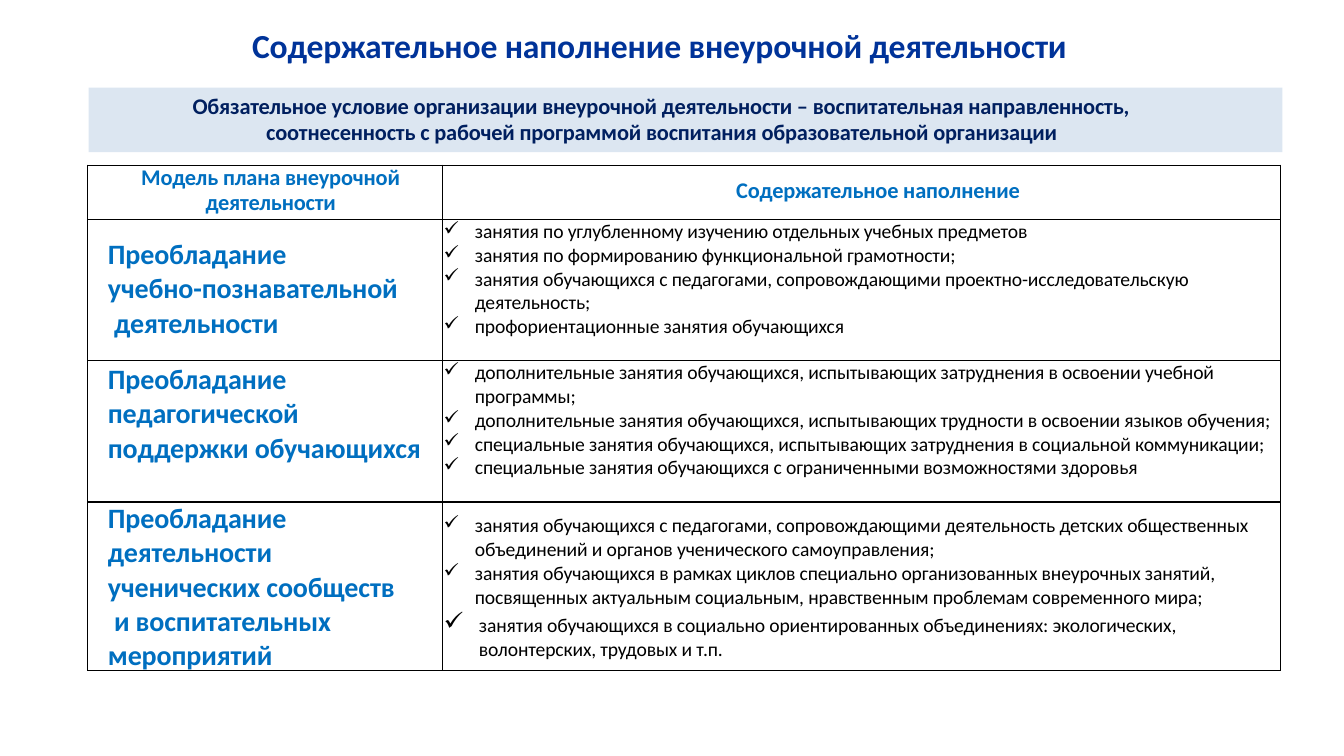
from pptx import Presentation
from pptx.dml.color import RGBColor as Rgb
from pptx.enum.shapes import MSO_SHAPE as Kind
from pptx.enum.text import MSO_ANCHOR as Anchor, PP_ALIGN as Align
from pptx.oxml import parse_xml
from pptx.oxml.ns import nsdecls
from pptx.util import Inches, Pt

HUES = {"title": "003399", "band": "DCE6F1", "navy": "001F5F",
        "blue": "006FC0", "black": "000000"}
TITLE = "Содержательное наполнение внеурочной деятельности"
RULE = ("Обязательное условие организации внеурочной деятельности – воспитательная "
        "направленность, соотнесенность с рабочей программой воспитания "
        "образовательной организации")
HEADS = [
    (["Модель плана внеурочной", "деятельности"], {"left": 0.11, "lead": 18.4}),
    (["Содержательное наполнение"], {"left": 0.33, "top": 0.12}),
]
CONT = {"mark": None, "hang": 0}
LAST = {"left": 0.36, "hang": -0.35, "grow": 129, "before": 3}
ROWS = [
    (["Преобладание", "учебно-познавательной\v деятельности"], {"top": 0.18},
     ["занятия по углубленному изучению отдельных учебных предметов",
      "занятия по формированию функциональной грамотности;",
      "занятия обучающихся с педагогами, сопровождающими "
      "проектно-исследовательскую деятельность;",
      "профориентационные занятия обучающихся"], {}),
    (["Преобладание", "педагогической", "поддержки обучающихся"], {"top": 0.02},
     ["дополнительные занятия обучающихся, испытывающих затруднения в освоении учебной",
      ("программы;", CONT),
      "дополнительные занятия обучающихся, испытывающих трудности "
      "в освоении языков обучения;",
      "специальные занятия обучающихся, испытывающих затруднения "
      "в социальной коммуникации;",
      "специальные занятия обучающихся с ограниченными возможностями здоровья"], {}),
    (["Преобладание", "деятельности",
      "ученических сообществ\v и воспитательных мероприятий"], {},
     ["занятия обучающихся с педагогами, сопровождающими деятельность детских "
      "общественных объединений и органов ученического самоуправления;",
      "занятия обучающихся в рамках циклов специально организованных внеурочных занятий,",
      ("посвященных актуальным социальным, нравственным проблемам "
       "современного мира;", CONT),
      ("занятия обучающихся в социально ориентированных объединениях: "
       "экологических, волонтерских, трудовых и т.п.", LAST)], {"top": 0.12}),
]
COLS = [3.52, 8.31]
TALL = [0.54, 1.4, 1.4, 1.67]


def style(par, text, size=14, hue="black", bold=False, align=Align.LEFT, left=0,
          hang=0, lead=None, before=0, mark=None, grow=100):
    par.text = text
    par.alignment = align
    par.space_before = Pt(before)
    if lead:
        par.line_spacing = Pt(lead)
    prop = par._p.get_or_add_pPr()
    prop.set("marL", str(Inches(left)))
    prop.set("indent", str(Inches(hang)))
    if mark:
        prop.append(parse_xml(f'<a:buSzPct {nsdecls("a")} val="{grow * 1000}"/>'))
        prop.append(parse_xml(f'<a:buChar {nsdecls("a")} char="{mark}"/>'))
    for run in par.runs:
        font = run.font
        font.name, font.size, font.bold = "Calibri", Pt(size), bold
        font.color.rgb = Rgb.from_string(HUES[hue])
        run._r.get_or_add_rPr().set("spc", "-12")


def write(frame, lines, **form):
    for num, line in enumerate(lines):
        text, extra = (line, {}) if isinstance(line, str) else line
        par = frame.add_paragraph() if num else frame.paragraphs[0]
        style(par, text, **{**form, **extra})


def pad(part, top):
    part.margin_left = part.margin_right = part.margin_bottom = 0
    part.margin_top = Inches(top)
    part.vertical_anchor = Anchor.TOP


def fill(cell, lines, top=0, **form):
    pad(cell, top)
    cell.fill.background()
    prop = cell._tc.get_or_add_tcPr()
    for num, side in enumerate(("lnL", "lnR", "lnT", "lnB")):
        prop.insert(num, parse_xml(
            f'<a:{side} {nsdecls("a")} w="12700"><a:solidFill>'
            f'<a:srgbClr val="{HUES["black"]}"/></a:solidFill></a:{side}>'))
    write(cell.text_frame, lines, **form)


def main():
    """Build the slide on the content of extracurricular work."""
    deck = Presentation()
    deck.slide_width, deck.slide_height = Inches(13.33), Inches(7.5)
    shapes = deck.slides.add_slide(deck.slide_layouts[6]).shapes

    title = shapes.add_textbox(Inches(2.49), Inches(0.24), Inches(8.19), Inches(0.43))
    title.text_frame.word_wrap = True
    pad(title.text_frame, 0.01)
    write(title.text_frame, [TITLE], size=24, hue="title", bold=True, left=0.01)

    band = shapes.add_shape(Kind.RECTANGLE, Inches(0.88), Inches(0.87),
                            Inches(11.84), Inches(0.64))
    band.shadow.inherit = False
    band.fill.solid()
    band.fill.fore_color.rgb = Rgb.from_string(HUES["band"])
    band.line.fill.background()
    band.text_frame.word_wrap = True
    pad(band.text_frame, 0.04)
    write(band.text_frame, [RULE], size=16, hue="navy", bold=True, left=1.76, hang=-0.73)

    grid = shapes.add_table(len(TALL), len(COLS), Inches(0.87), Inches(1.64),
                            Inches(sum(COLS)), Inches(sum(TALL))).table
    grid.first_row = grid.horz_banding = False
    for col, wide in zip(grid.columns, COLS):
        col.width = Inches(wide)
    for row, tall in zip(grid.rows, TALL):
        row.height = Inches(tall)
    for num, (lines, form) in enumerate(HEADS):
        fill(grid.cell(0, num), lines, size=16, hue="blue", bold=True,
             align=Align.CENTER, **form)
    for num, (model, look, items, form) in enumerate(ROWS, 1):
        fill(grid.cell(num, 0), model, size=20, hue="blue", bold=True, left=0.2, **look)
        fill(grid.cell(num, 1), items, left=0.32, hang=-0.31, mark="✓", **form)
    deck.save("out.pptx")


if __name__ == "__main__":
    main()
